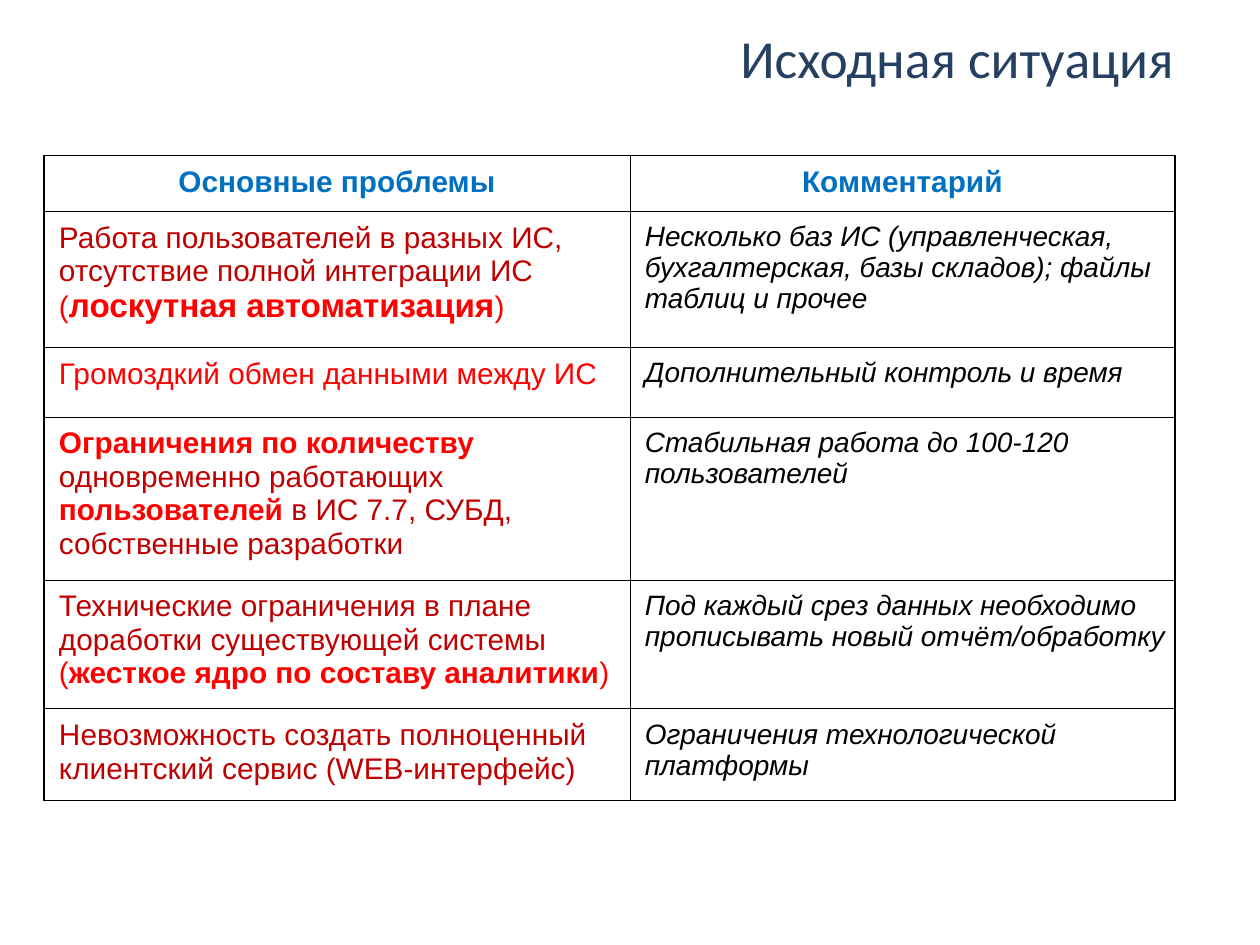
from lxml.etree import SubElement
from pptx import Presentation
from pptx.dml.color import RGBColor
from pptx.enum.text import MSO_ANCHOR, PP_ALIGN
from pptx.oxml.ns import qn
from pptx.util import Pt

PX = 914400 // 126
THEME = {
    "title": RGBColor(0x25, 0x40, 0x61),
    "header": RGBColor(0x00, 0x70, 0xC0),
    "problem": RGBColor(0xC0, 0x00, 0x00),
    "accent": RGBColor(0xFF, 0x00, 0x00),
    "comment": RGBColor(0x00, 0x00, 0x00),
    "border": "000000",
    "title_font": "Calibri",
    "body_font": "Arial",
    "title_size": Pt(30.6),
    "problem_size": Pt(17),
    "strong_size": Pt(19),
    "comment_size": Pt(16),
}
HEADERS = ["Основные проблемы", "Комментарий"]
COL_WIDTHS = [586, 545]
ROW_HEIGHTS = [56, 136, 70, 163, 129, 92]

PLAIN, RED, BOLD, LARGE = "plain", "red", "bold", "large"
ROWS = [
    ([("Работа пользователей в разных ИС, отсутствие полной интеграции ИС ", PLAIN),
      ("(", RED), ("лоскутная автоматизация", LARGE), (")", RED)],
     "Несколько баз ИС (управленческая, бухгалтерская, базы складов); файлы таблиц и прочее"),
    ([("Громоздкий обмен данными между ИС", RED)],
     "Дополнительный контроль и время"),
    ([("Ограничения по количеству ", BOLD), ("одновременно работающих ", PLAIN),
      ("пользователей ", BOLD), ("в ИС 7.7, СУБД, собственные разработки", PLAIN)],
     "Стабильная работа до 100-120 пользователей"),
    ([("Технические ограничения в плане доработки существующей системы", PLAIN),
      (" (", RED), ("жесткое ядро по составу аналитики", BOLD), (")", RED)],
     "Под каждый срез данных необходимо прописывать новый отчёт/обработку"),
    ([("Невозможность создать полноценный клиентский сервис (WEB-интерфейс)", PLAIN)],
     "Ограничения технологической платформы"),
]


def set_font(font, name, size, color):
    font.name = name
    font.size = size
    font.color.rgb = color


def set_borders(cell, widths):
    tcPr = cell._tc.get_or_add_tcPr()
    for i, (side, width) in enumerate(widths.items()):
        ln = SubElement(tcPr, qn(f"a:ln{side}"), w=str(Pt(width)))
        fill = SubElement(ln, qn("a:solidFill"))
        SubElement(fill, qn("a:srgbClr"), val=THEME["border"])
        tcPr.insert(i, ln)


prs = Presentation()
prs.slide_width, prs.slide_height = 1260 * PX, 945 * PX
s = prs.slides.add_slide(prs.slide_layouts[6])

title = s.shapes.add_textbox(422 * PX, 18 * PX, 764 * PX, 78 * PX)
tf = title.text_frame
tf.word_wrap = True
tf.vertical_anchor = MSO_ANCHOR.MIDDLE
p = tf.paragraphs[0]
p.text = "Исходная ситуация"
p.alignment = PP_ALIGN.RIGHT
set_font(p.font, THEME["title_font"], THEME["title_size"], THEME["title"])

table = s.shapes.add_table(
    len(ROW_HEIGHTS), len(COL_WIDTHS), 44 * PX, 155 * PX,
    sum(COL_WIDTHS) * PX, sum(ROW_HEIGHTS) * PX).table
table.first_row = False
table.horz_banding = False
for column, width in zip(table.columns, COL_WIDTHS):
    column.width = width * PX
for row, height in zip(table.rows, ROW_HEIGHTS):
    row.height = height * PX

for i, row in enumerate(table.rows):
    for j, cell in enumerate(row.cells):
        cell.fill.background()
        set_borders(cell, {"L": 0.5 if j else 1, "R": 1 if j else 0.5, "T": 0.5, "B": 0.5})
        cell.margin_left = (15 if i else 5) * PX
        cell.margin_right = 5 * PX
        cell.margin_top = cell.margin_bottom = 10 * PX
        p = cell.text_frame.paragraphs[0]
        if i == 0:
            p.text = HEADERS[j]
            p.alignment = PP_ALIGN.CENTER
            set_font(p.font, THEME["body_font"], THEME["problem_size"], THEME["header"])
            p.font.bold = True
        elif j == 1:
            p.text = ROWS[i - 1][1]
            set_font(p.font, THEME["body_font"], THEME["comment_size"], THEME["comment"])
            p.font.italic = True
        else:
            for text, style in ROWS[i - 1][0]:
                r = p.add_run()
                r.text = text
                size = THEME["strong_size" if style == LARGE else "problem_size"]
                color = THEME["problem" if style == PLAIN else "accent"]
                set_font(r.font, THEME["body_font"], size, color)
                r.font.bold = style in (BOLD, LARGE)

prs.save("out.pptx")
